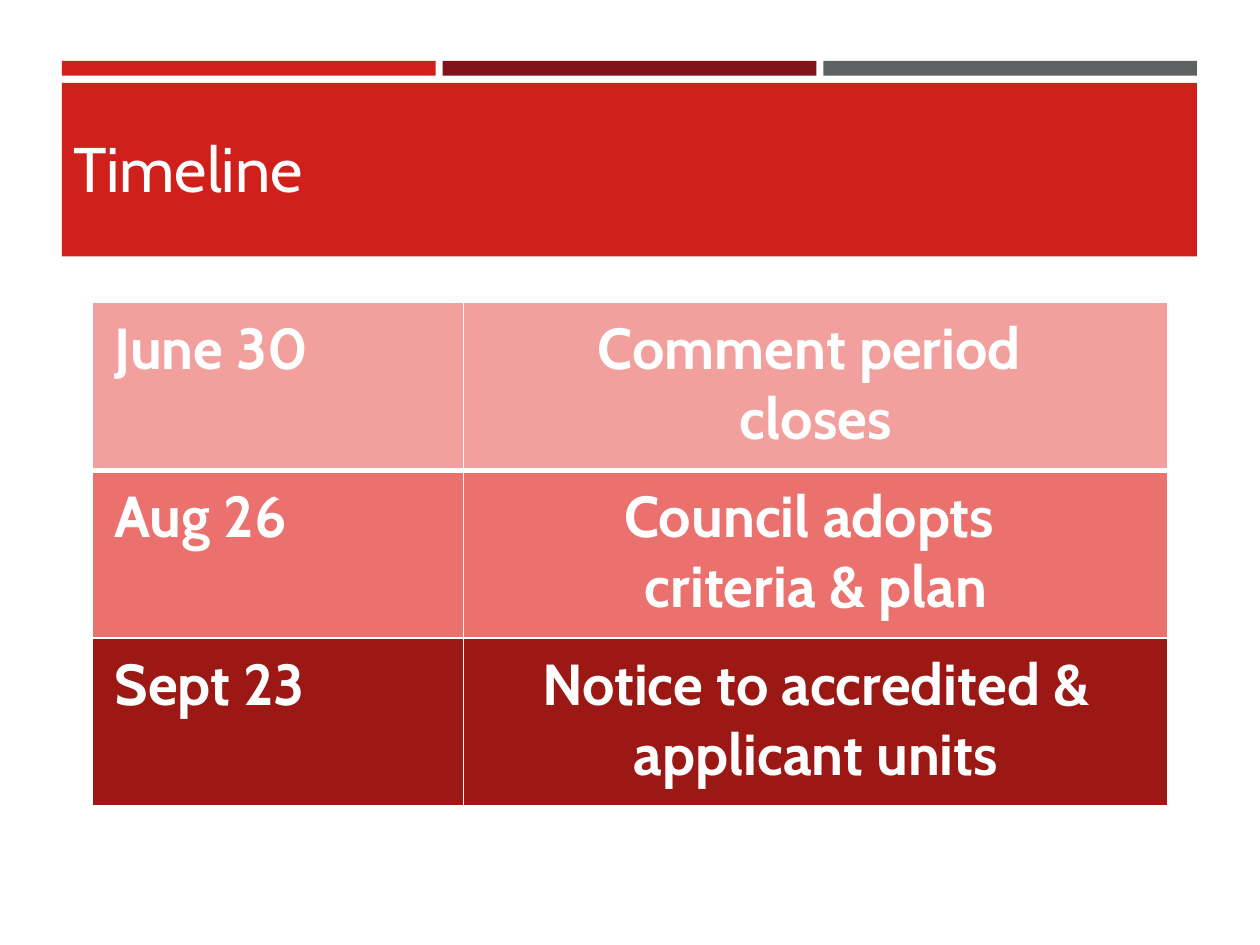
import pptx
import pptx.util
import pptx.dml.color
import pptx.enum.shapes
import pptx.enum.text
import pptx.oxml
import pptx.oxml.ns
from dataclasses import dataclass

Pt = pptx.util.Pt
Align = pptx.enum.text.PP_ALIGN
Anchor = pptx.enum.text.MSO_ANCHOR


@dataclass(frozen=True)
class Theme:
    font: str = "Cabin"
    title_size: int = 36
    cell_size: int = 33
    red: str = "D0201C"
    maroon: str = "811419"
    grey: str = "5F6062"
    title_text: str = "FFFEFF"
    white: str = "FFFFFF"


theme = Theme()
title_text = "Timeline"
stripe_colours = [theme.red, theme.maroon, theme.grey]
milestones = [
    ("June 30", ["Comment period ", "closes"], "F2A09E"),
    ("Aug 26", ["Council adopts ", "criteria & plan"], "EB716E"),
    ("Sept 23", ["Notice to accredited & applicant units"], "9C1815"),
]

band_left, band_top, band_width, band_height = 35.4, 47.4, 648.6, 99.2
stripe_top, stripe_height, stripe_gap = 34.8, 8.4, 4
table_left, table_top = 52.5, 173
column_widths = [212.4, 402.6]
row_height = 95.8


def colour(value):
    return pptx.dml.color.RGBColor.from_string(value)


def add_block(page, left, top, width, height, fill):
    block = page.shapes.add_shape(
        pptx.enum.shapes.MSO_SHAPE.RECTANGLE, Pt(left), Pt(top), Pt(width), Pt(height))
    block.shadow.inherit = False
    block.fill.solid()
    block.fill.fore_color.rgb = colour(fill)
    block.line.fill.background()


def add_span(para, text, size, text_colour, bold=False):
    span = para.add_run()
    span.text = text
    span.font.name = theme.font
    span.font.size = Pt(size)
    span.font.bold = bold
    span.font.color.rgb = colour(text_colour)


def add_border(cell, side, width):
    cell._tc.get_or_add_tcPr().append(pptx.oxml.parse_xml(
        f'<a:{side} {pptx.oxml.ns.nsdecls("a")} w="{Pt(width)}"><a:solidFill>'
        f'<a:srgbClr val="{theme.white}"/></a:solidFill></a:{side}>'))


def fill_cell(cell, lines, alignment, fill, top_border, bottom_border):
    cell.margin_left = cell.margin_right = Pt(13)
    cell.margin_top = cell.margin_bottom = Pt(6.5)
    cell.vertical_anchor = Anchor.TOP
    for side, width in (("lnL", 1), ("lnR", 1), ("lnT", top_border), ("lnB", bottom_border)):
        add_border(cell, side, width)
    cell.fill.solid()
    cell.fill.fore_color.rgb = colour(fill)
    para = cell.text_frame.paragraphs[0]
    para.alignment = alignment
    for index, line in enumerate(lines):
        if index:
            para.add_line_break()
        add_span(para, line, theme.cell_size, theme.white, True)


def add_header(page):
    count = len(stripe_colours)
    stripe_width = (band_width - stripe_gap * (count - 1)) / count
    for index, fill in enumerate(stripe_colours):
        left = band_left + index * (stripe_width + stripe_gap)
        add_block(page, left, stripe_top, stripe_width, stripe_height, fill)
    add_block(page, band_left, band_top, band_width, band_height, theme.red)

    title = page.shapes.title
    page.shapes._spTree.append(title._element)
    title.left, title.top, title.width, title.height = Pt(34.6), Pt(55.4), Pt(651.6), Pt(80)
    title.text_frame.vertical_anchor = Anchor.MIDDLE
    para = title.text_frame.paragraphs[0]
    para.alignment = Align.LEFT
    add_span(para, title_text, theme.title_size, theme.title_text)


def add_timeline(page):
    table = page.shapes.add_table(
        len(milestones), len(column_widths), Pt(table_left), Pt(table_top),
        Pt(sum(column_widths)), Pt(row_height * len(milestones))).table
    for column, width in zip(table.columns, column_widths):
        column.width = Pt(width)
    for index, (date, event, fill) in enumerate(milestones):
        table.rows[index].height = Pt(row_height)
        borders = (3 if index == 1 else 1, 3 if index == 0 else 1)
        fill_cell(table.cell(index, 0), [date], Align.LEFT, fill, *borders)
        fill_cell(table.cell(index, 1), event, Align.CENTER, fill, *borders)


def main():
    deck = pptx.Presentation()
    deck.slide_width, deck.slide_height = Pt(720), Pt(540)
    page = deck.slides.add_slide(deck.slide_layouts[5])
    add_header(page)
    add_timeline(page)
    deck.save("out.pptx")


if __name__ == "__main__":
    main()
